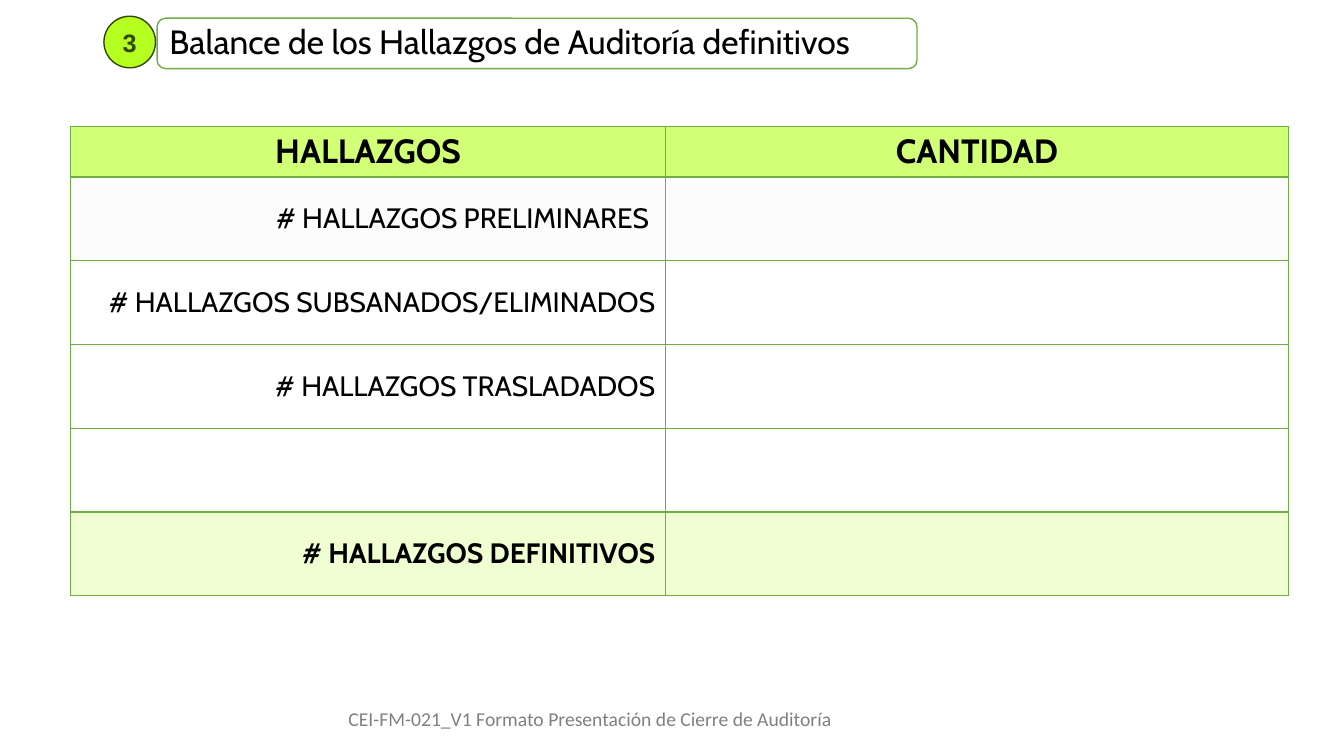
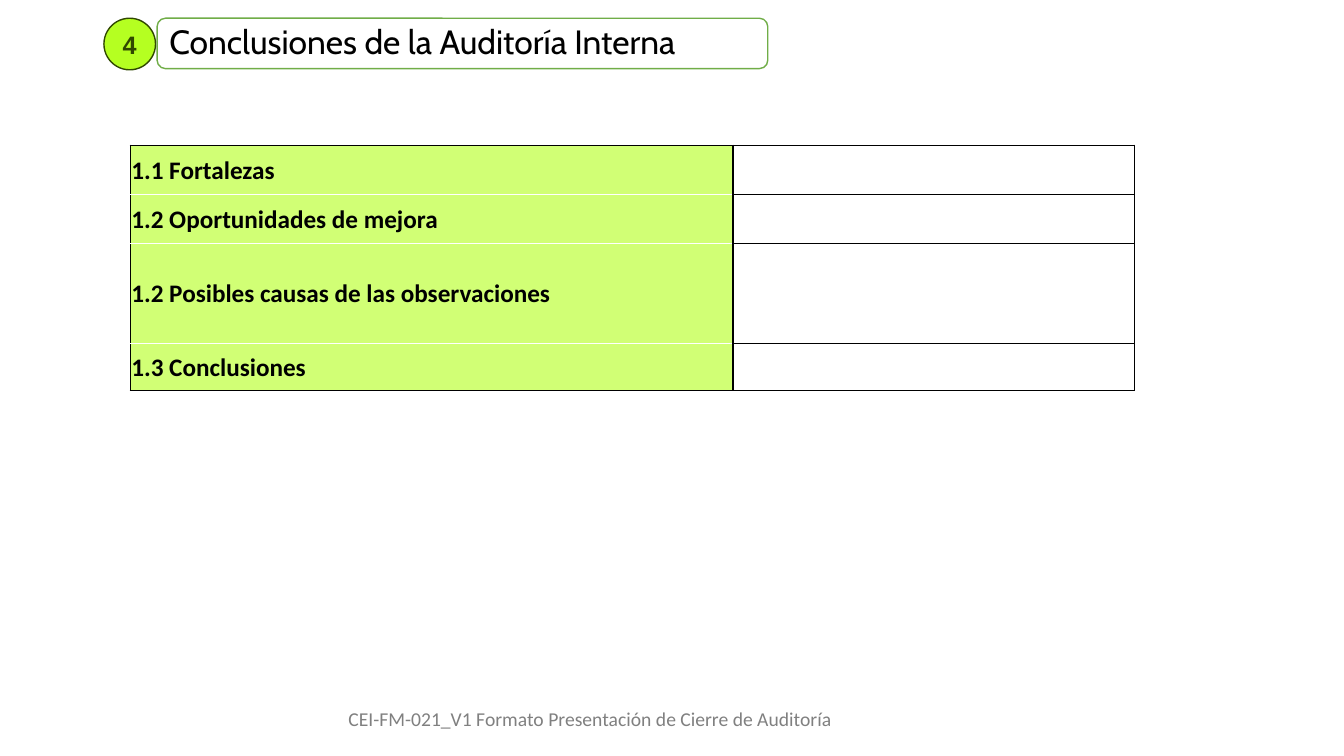
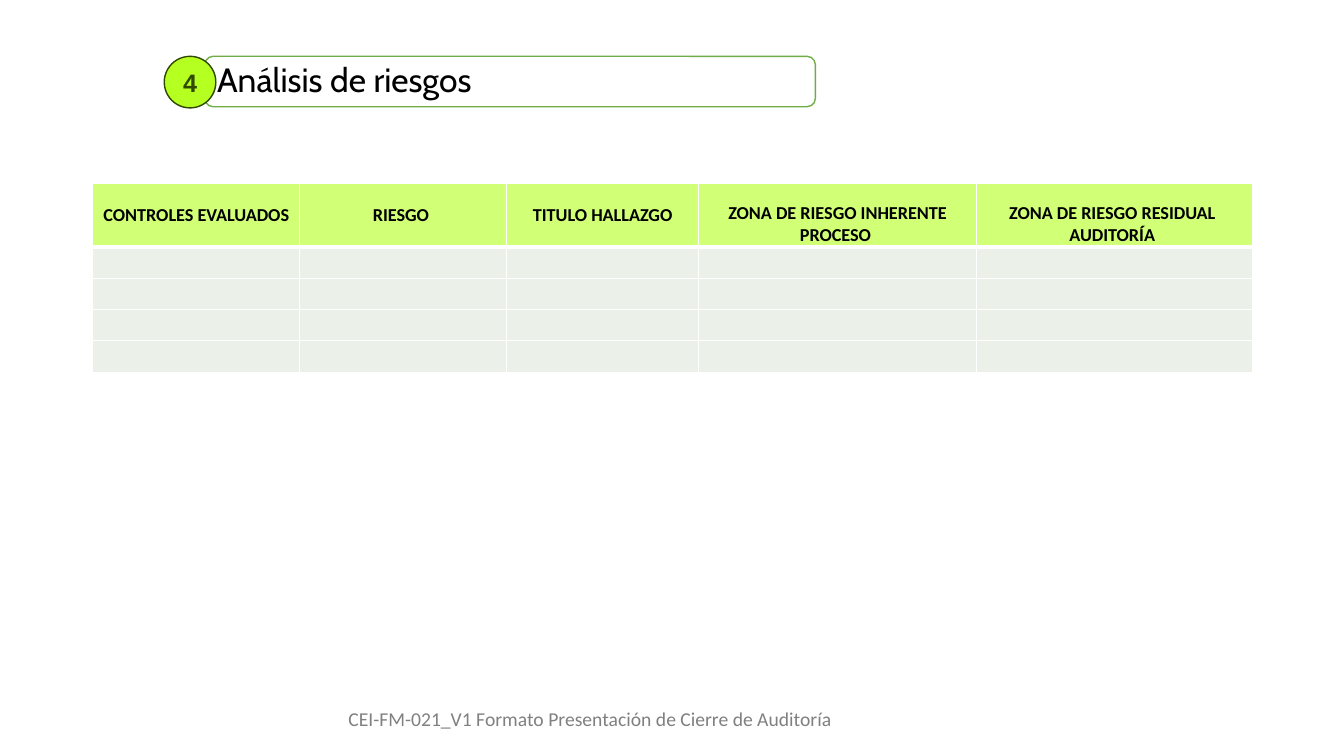
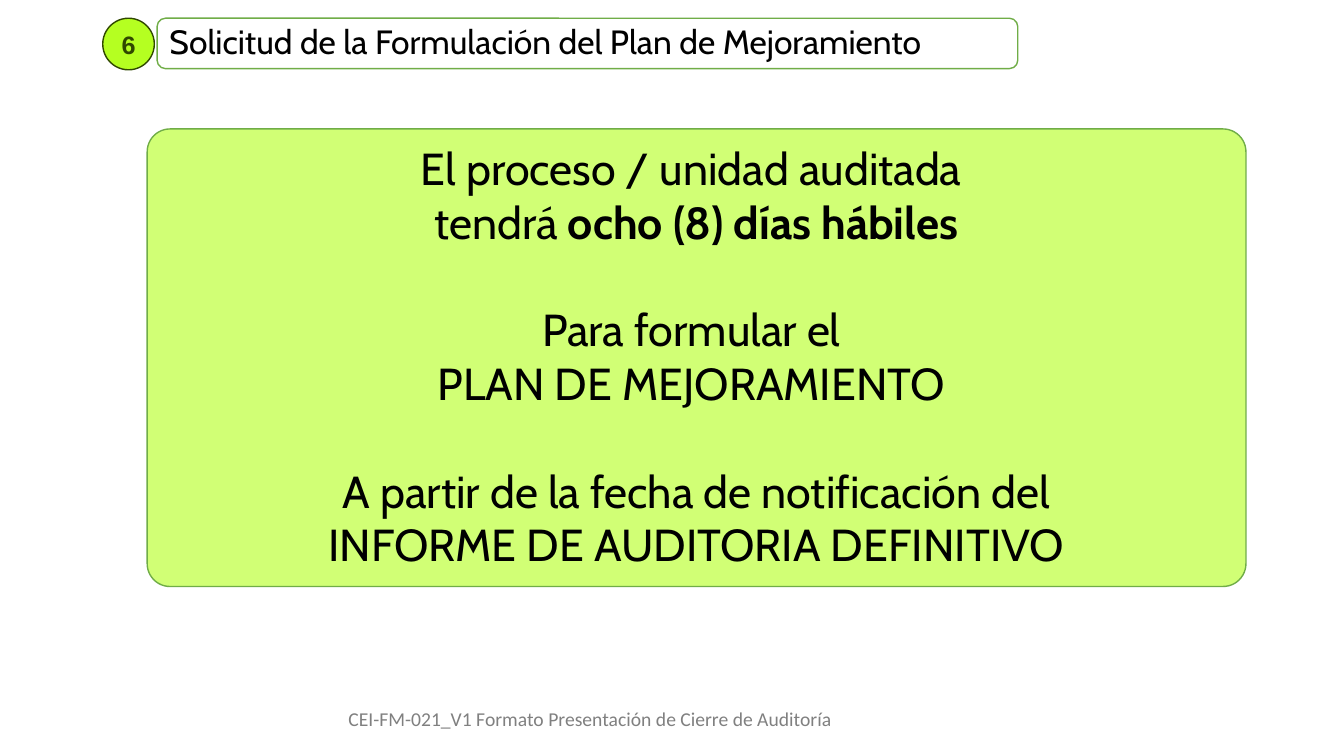
"""Builds the four closing slides of an internal audit presentation."""
from lxml import etree
from pptx import Presentation
from pptx.dml.color import RGBColor
from pptx.enum import shapes, text
from pptx.oxml import ns
from pptx import util as u

BLACK = RGBColor(0x00, 0x00, 0x00)
WHITE = RGBColor(0xFF, 0xFF, 0xFF)
GRAY = RGBColor(0x80, 0x80, 0x80)
PALE_GRAY = RGBColor(0xF2, 0xF2, 0xF2)
MIST = RGBColor(0xEB, 0xF1, 0xE9)
LIME = RGBColor(0xB5, 0xFF, 0x21)
LIGHT_LIME = RGBColor(0xD1, 0xFF, 0x75)
GREEN = RGBColor(0x70, 0xAD, 0x47)
DARK_GREEN = RGBColor(0x30, 0x48, 0x00)

TITLE_FONT, BODY_FONT, BADGE_FONT = "Cabin", "Calibri", "Arial"
FOOTER = "CEI-FM-021_V1 Formato Presentación de Cierre de Auditoría"
LEFT, CENTER, RIGHT = text.PP_ALIGN.LEFT, text.PP_ALIGN.CENTER, text.PP_ALIGN.RIGHT
TOP, MIDDLE, BOTTOM = text.MSO_ANCHOR.TOP, text.MSO_ANCHOR.MIDDLE, text.MSO_ANCHOR.BOTTOM
OVAL, ROUNDED = shapes.MSO_SHAPE.OVAL, shapes.MSO_SHAPE.ROUNDED_RECTANGLE


class AuditDeck:
    """Holds the presentation, its style and the current slide."""

    def __init__(self):
        self.prs = Presentation()
        self.prs.slide_width, self.prs.slide_height = u.Cm(33.87), u.Cm(19.05)
        self.slide = None

    def new_slide(self, number, title, width, box=(3.96, 0.46), badge=(2.62, 0.46)):
        """Adds a slide with its numbered heading and footer."""
        self.slide = self.prs.slides.add_slide(self.prs.slide_layouts[6])
        heading = self.panel(ROUNDED, (*box, width, 1.27), WHITE, GREEN, BOTTOM)
        heading.text = title
        heading.paragraphs[0].line_spacing = u.Pt(25)
        self.format(heading, TITLE_FONT, 24)
        mark = self.panel(OVAL, (*badge, 1.3, 1.3), LIME, DARK_GREEN, MIDDLE)
        mark.text = number
        self.format(mark, BADGE_FONT, 18, DARK_GREEN, True, CENTER)
        self.footer()

    def footer(self):
        """Writes the document code at the foot of the slide."""
        place = map(u.Cm, (8.53, 17.7, 12.8, 0.86))
        frame = self.slide.shapes.add_textbox(*place).text_frame
        frame.word_wrap = False
        frame.auto_size = text.MSO_AUTO_SIZE.SHAPE_TO_FIT_TEXT
        frame.text = FOOTER
        self.format(frame, BODY_FONT, 14, GRAY)

    def panel(self, kind, place, fill, line, anchor, corner=None):
        """Adds a filled, outlined shape and returns its text frame."""
        shape = self.slide.shapes.add_shape(kind, *map(u.Cm, place))
        shape.shadow.inherit = False
        shape.fill.solid()
        shape.fill.fore_color.rgb = fill
        shape.line.color.rgb = line
        shape.line.width = u.Pt(1)
        if corner is not None:
            shape.adjustments[0] = corner
        shape.text_frame.word_wrap = True
        shape.text_frame.vertical_anchor = anchor
        return shape.text_frame

    def format(self, frame, font, size, color=BLACK, bold=False, align=LEFT):
        """Formats every run of a text frame, or its end mark if empty."""
        for paragraph in frame.paragraphs:
            paragraph.alignment = align
            for run in paragraph.runs:
                run.font.name, run.font.size = font, u.Pt(size)
                run.font.bold, run.font.color.rgb = bold, color
            if not paragraph.runs:
                etree.SubElement(paragraph._p, ns.qn("a:endParaRPr"), sz=str(size * 100))

    def table(self, corner, widths, heights):
        """Adds a plain table and returns it."""
        size = (sum(widths), sum(heights))
        frame = self.slide.shapes.add_table(
            len(heights), len(widths), *map(u.Cm, (*corner, *size)))
        grid = frame.table
        grid.first_row = grid.horz_banding = False
        for column, width in zip(grid.columns, widths):
            column.width = u.Cm(width)
        for row, height in zip(grid.rows, heights):
            row.height = u.Cm(height)
        return grid

    def cell(self, cell, words, font, size, line, fill=None, alpha=None, bold=False,
             align=LEFT, anchor=MIDDLE, tight=False, edges=None):
        """Fills in one cell; edges overrides (colour, width) by side."""
        cell.text = words
        cell.vertical_anchor = anchor
        if tight:
            cell.margin_left = cell.margin_right = cell.margin_top = u.Cm(0.03)
            cell.margin_bottom = 0
        self.format(cell.text_frame, font, size, BLACK, bold, align)
        properties = cell._tc.get_or_add_tcPr()
        for side in "LRTB":
            color, width = (edges or {}).get(side, (line, 1))
            border = etree.SubElement(properties, ns.qn("a:ln" + side), w=str(u.Pt(width)))
            paint = etree.SubElement(border, ns.qn("a:solidFill"))
            etree.SubElement(paint, ns.qn("a:srgbClr"), val=str(color))
        if fill is None:
            cell.fill.background()
            return
        cell.fill.solid()
        cell.fill.fore_color.rgb = fill
        if alpha:
            tint = properties.find(ns.qn("a:solidFill")).find(ns.qn("a:srgbClr"))
            etree.SubElement(tint, ns.qn("a:alpha"), val=str(alpha * 1000))


def findings_slide(deck):
    """Balance of the findings."""
    deck.new_slide("3", "Balance de los Hallazgos de Auditoría definitivos", 19.15,
                   badge=(2.62, 0.41))
    findings = [
        ("# HALLAZGOS PRELIMINARES ", PALE_GRAY, False),
        ("# HALLAZGOS SUBSANADOS/ELIMINADOS", None, False),
        ("# HALLAZGOS TRASLADADOS", WHITE, False),
        ("", None, False),
        ("# HALLAZGOS DEFINITIVOS", LIME, True),
    ]
    balance = deck.table((1.78, 3.18), (14.99, 15.7), [1.28] + [2.11] * len(findings))
    for column, header in enumerate(("HALLAZGOS", "CANTIDAD")):
        deck.cell(balance.cell(0, column), header, TITLE_FONT, 24, GREEN, LIGHT_LIME,
                  bold=True, align=CENTER, anchor=TOP, edges={"B": (GREEN, 2)})
    for row, (finding, fill, bold) in enumerate(findings, 1):
        for column, words in enumerate((finding, "")):
            edges = {"T": (GREEN, 2)} if row == 1 else None
            deck.cell(balance.cell(row, column), words, TITLE_FONT, 20, GREEN, fill, 20,
                      bold, RIGHT, edges=edges)


def conclusions_slide(deck):
    """Conclusions of the audit."""
    deck.new_slide("4", "Conclusiones de la Auditoría Interna", 15.39)
    topics = ("1.1 Fortalezas", "1.2 Oportunidades de mejora",
              "1.2 Posibles causas de las observaciones", "1.3 Conclusiones")
    summary = deck.table((3.28, 3.66), (15.19, 10.13), (1.24, 1.24, 2.51, 1.19))
    last = len(topics) - 1
    for row, topic in enumerate(topics):
        edges = {}
        if row > 0:
            edges["T"] = (WHITE, 1)
        if row < last:
            edges["B"] = (WHITE, 1)
        deck.cell(summary.cell(row, 0), topic, BODY_FONT, 18, BLACK, LIGHT_LIME,
                  bold=True, tight=True, edges=edges)
        deck.cell(summary.cell(row, 1), "", BODY_FONT, 18, BLACK, WHITE)


def risks_slide(deck):
    """Risk analysis."""
    deck.new_slide("4", "Análisis de riesgos", 15.39, box=(5.16, 1.42), badge=(4.14, 1.42))
    headers = [
        ("CONTROLES EVALUADOS", MIDDLE),
        ("RIESGO ", MIDDLE),
        ("TITULO HALLAZGO", MIDDLE),
        ("ZONA DE RIESGO INHERENTE PROCESO ", BOTTOM),
        ("ZONA DE RIESGO RESIDUAL \vAUDITORÍA ", BOTTOM),
    ]
    heights = [1.6] + [0.79] * 4
    risks = deck.table((2.34, 4.62), (5.21, 5.21, 4.85, 6.99, 6.96), heights)
    for column, (header, anchor) in enumerate(headers):
        deck.cell(risks.cell(0, column), header, BODY_FONT, 13, WHITE, LIGHT_LIME,
                  bold=True, align=CENTER, anchor=anchor, tight=True,
                  edges={"B": (WHITE, 3)})
        for row in range(1, len(heights)):
            edges = {"T": (WHITE, 3)} if row == 1 else None
            deck.cell(risks.cell(row, column), "", BODY_FONT, 13, WHITE, MIST,
                      tight=True, edges=edges)


def plan_slide(deck):
    """Request for the improvement plan."""
    deck.new_slide("6", "Solicitud de la Formulación del Plan de Mejoramiento", 21.69,
                   badge=(2.59, 0.46))
    request = deck.panel(ROUNDED, (3.71, 3.25, 27.69, 11.53), LIGHT_LIME, GREEN, TOP, 0.05)
    request.text = "\n".join((
        "El proceso / unidad auditada ", "tendrá ",
        "Para formular el ", "PLAN DE MEJORAMIENTO ",
        "A partir de la fecha de notificación del", " INFORME DE AUDITORIA DEFINITIVO "))
    deadline = request.paragraphs[1].add_run()
    deadline.text = "ocho (8) días hábiles"
    deck.format(request, TITLE_FONT, 32, align=CENTER)
    deadline.font.bold = True
    for paragraph in request.paragraphs[2::2]:
        paragraph.space_before = u.Pt(38.4)


def main():
    """Builds and saves the deck."""
    deck = AuditDeck()
    for build in (findings_slide, conclusions_slide, risks_slide, plan_slide):
        build(deck)
    deck.prs.save("out.pptx")


if __name__ == "__main__":
    main()
